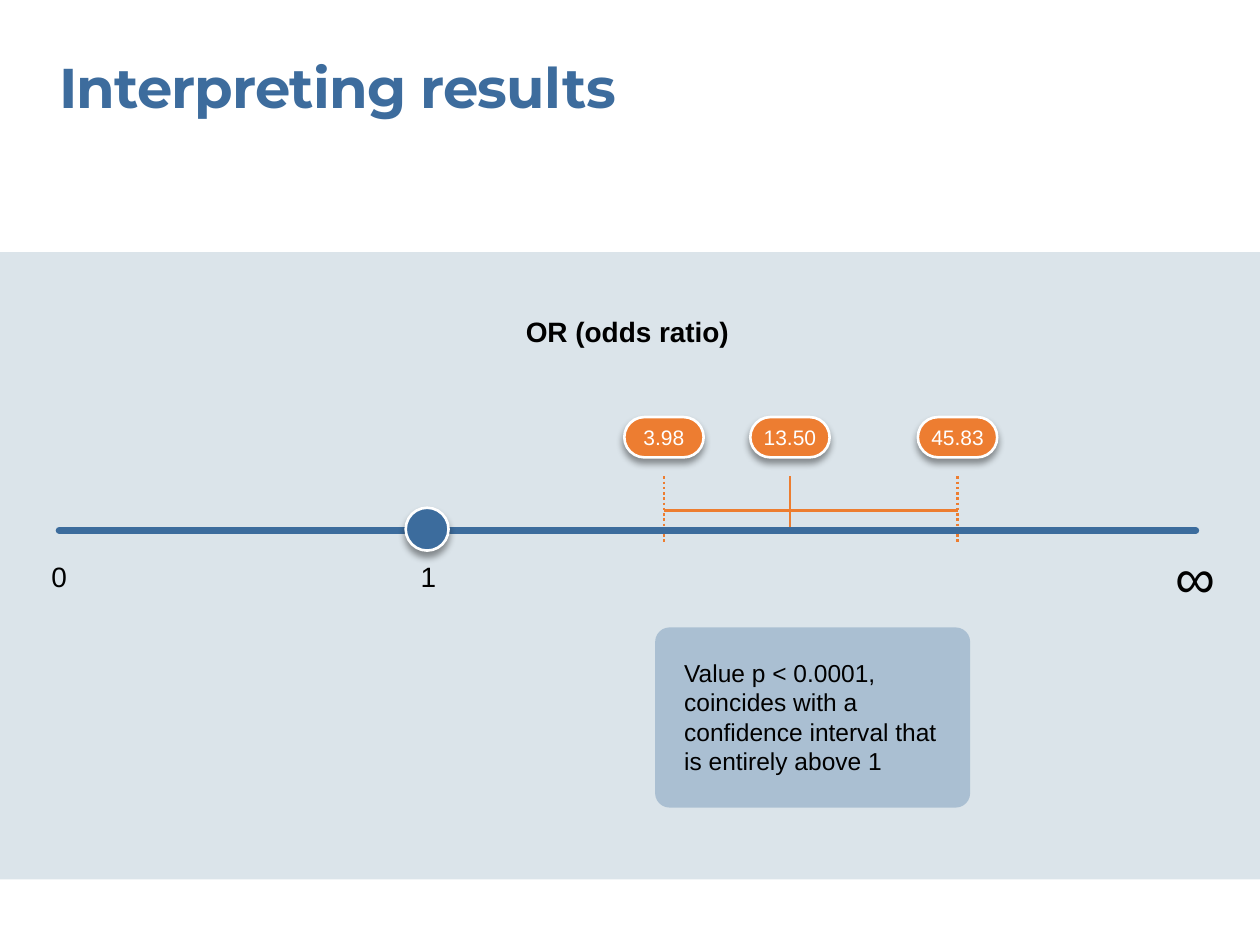
from typing import NamedTuple

from pptx import Presentation
from pptx.dml.color import RGBColor
from pptx.enum.dml import MSO_LINE
from pptx.enum.shapes import MSO_CONNECTOR, MSO_SHAPE
from pptx.enum.text import MSO_ANCHOR, PP_ALIGN
from pptx.oxml import parse_xml
from pptx.oxml.ns import nsdecls, qn
from pptx.oxml.xmlchemy import OxmlElement
from pptx.util import Inches, Pt

WHITE = RGBColor(0xFF, 0xFF, 0xFF)
BLACK = RGBColor(0x00, 0x00, 0x00)
BLUE = RGBColor(0x3C, 0x6C, 0x9D)
TITLE_BLUE = RGBColor(0x3D, 0x6C, 0x9D)
PALE_BLUE = RGBColor(0xDB, 0xE4, 0xEA)
ORANGE = RGBColor(0xED, 0x7D, 0x31)
LINE_ORANGE = RGBColor(0xED, 0x7D, 0x30)

AXIS_Y = 4.21
INTERVAL_Y = 4.05
MARK_TOP = 3.78
PILL_WIDTH = 0.63


class Area(NamedTuple):
    left: float
    top: float
    width: float
    height: float

    def lengths(self):
        return [Inches(value) for value in self]


class Label(NamedTuple):
    text: str
    area: Area
    size: int
    align: PP_ALIGN = PP_ALIGN.CENTER
    bold: bool = False
    font: str = "Arial"
    color: RGBColor = BLACK


class Estimate(NamedTuple):
    text: str
    x: float
    bottom: float
    dotted: bool


LABELS = [
    Label("0", Area(0.29, 4.44, 0.36, 0.27), 16),
    Label("1", Area(3.22, 4.44, 0.36, 0.27), 16),
    Label("∞", Area(9.31, 4.31, 0.36, 0.54), 32),
    Label("Value p < 0.0001, coincides with a confidence interval that is entirely above 1",
          Area(5.43, 5.22, 2.1, 0.94), 14, PP_ALIGN.LEFT),
    Label("OR (odds ratio)", Area(0.48, 2.5, 9, 0.27), 16, bold=True),
]
TITLE = Label("Interpreting results", Area(0.47, 0.42, 9.02, 0.54), 32,
              PP_ALIGN.LEFT, True, "Montserrat", TITLE_BLUE)
ESTIMATES = [
    Estimate("3.98", 5.27, 4.31, True),
    Estimate("13.50", 6.27, AXIS_Y, False),
    Estimate("45.83", 7.6, 4.31, True),
]


def style_paragraph(para, text: str, size: int, color: RGBColor, align: PP_ALIGN,
                    bold: bool = False, font: str = "Arial"):
    para.alignment = align
    para.font.name = font
    para.font.size = Pt(size)
    para.font.bold = bold
    para.font.color.rgb = color
    span = para.add_run()
    span.text = text
    return span


def add_label(page, label: Label):
    box = page.shapes.add_textbox(*label.area.lengths())
    frame = box.text_frame
    frame.word_wrap = True
    frame.margin_left = frame.margin_right = frame.margin_top = frame.margin_bottom = 0
    return style_paragraph(frame.paragraphs[0], label.text, label.size, label.color,
                           label.align, label.bold, label.font)


def add_block(page, kind: MSO_SHAPE, area: Area, fill: RGBColor, raised: bool = False):
    shape = page.shapes.add_shape(kind, *area.lengths())
    shape.fill.solid()
    shape.fill.fore_color.rgb = fill
    shape.shadow.inherit = False
    if raised:
        shape.line.color.rgb = WHITE
        shape.line.width = Pt(1.5)
        shape._element.spPr.find(qn("a:effectLst")).append(parse_xml(
            f'<a:outerShdw {nsdecls("a")} blurRad="{Pt(4)}" dist="{Pt(3)}" '
            'dir="5400000" algn="ctr" rotWithShape="0"><a:srgbClr val="000000">'
            '<a:alpha val="40000"/></a:srgbClr></a:outerShdw>'))
    else:
        shape.line.fill.background()
    return shape


def add_line(page, start: tuple[float, float], end: tuple[float, float],
             color: RGBColor = LINE_ORANGE, width: float = 1.5, dotted: bool = False):
    line = page.shapes.add_connector(
        MSO_CONNECTOR.STRAIGHT, *[Inches(value) for value in (*start, *end)])
    line.line.color.rgb = color
    line.line.width = Pt(width)
    if dotted:
        line.line.dash_style = MSO_LINE.ROUND_DOT
    line._element.spPr.append(OxmlElement("a:effectLst"))
    return line


def add_pill(page, estimate: Estimate):
    area = Area(estimate.x - PILL_WIDTH / 2, 3.31, PILL_WIDTH, 0.32)
    pill = add_block(page, MSO_SHAPE.ROUNDED_RECTANGLE, area, ORANGE, raised=True)
    pill.adjustments[0] = 0.5
    frame = pill.text_frame
    frame.word_wrap = False
    frame.vertical_anchor = MSO_ANCHOR.MIDDLE
    frame.margin_left = frame.margin_right = Inches(0.2)
    frame.margin_top = frame.margin_bottom = Inches(0.12)
    style_paragraph(frame.paragraphs[0], estimate.text, 12, WHITE, PP_ALIGN.CENTER)


def main():
    """Build the odds ratio slide and save it."""
    deck = Presentation()
    deck.slide_width, deck.slide_height = Inches(10), Inches(7.5)
    page = deck.slides.add_slide(deck.slide_layouts[6])

    add_block(page, MSO_SHAPE.RECTANGLE, Area(0, 2, 10, 4.98), PALE_BLUE)
    for estimate in ESTIMATES:
        add_line(page, (estimate.x, MARK_TOP), (estimate.x, estimate.bottom),
                 dotted=estimate.dotted)
    add_line(page, (ESTIMATES[0].x, INTERVAL_Y), (ESTIMATES[-1].x, INTERVAL_Y))

    title_span = add_label(page, TITLE)
    title_span._r.get_or_add_rPr().set("spc", "-50")

    axis = add_line(page, (0.47, AXIS_Y), (9.49, AXIS_Y), BLUE, 4)
    axis.line._get_or_add_ln().set("cap", "rnd")
    add_block(page, MSO_SHAPE.OVAL, Area(3.22, 4.03, 0.34, 0.34), BLUE, raised=True)
    for estimate in ESTIMATES:
        add_pill(page, estimate)

    note = add_block(page, MSO_SHAPE.ROUNDED_RECTANGLE, Area(5.2, 4.98, 2.5, 1.43), BLUE)
    note.adjustments[0] = 0.08
    alpha = OxmlElement("a:alpha")
    alpha.set("val", "30000")
    note._element.spPr.find(qn("a:solidFill")).find(qn("a:srgbClr")).append(alpha)
    for label in LABELS:
        add_label(page, label)

    deck.save("out.pptx")


if __name__ == "__main__":
    main()
